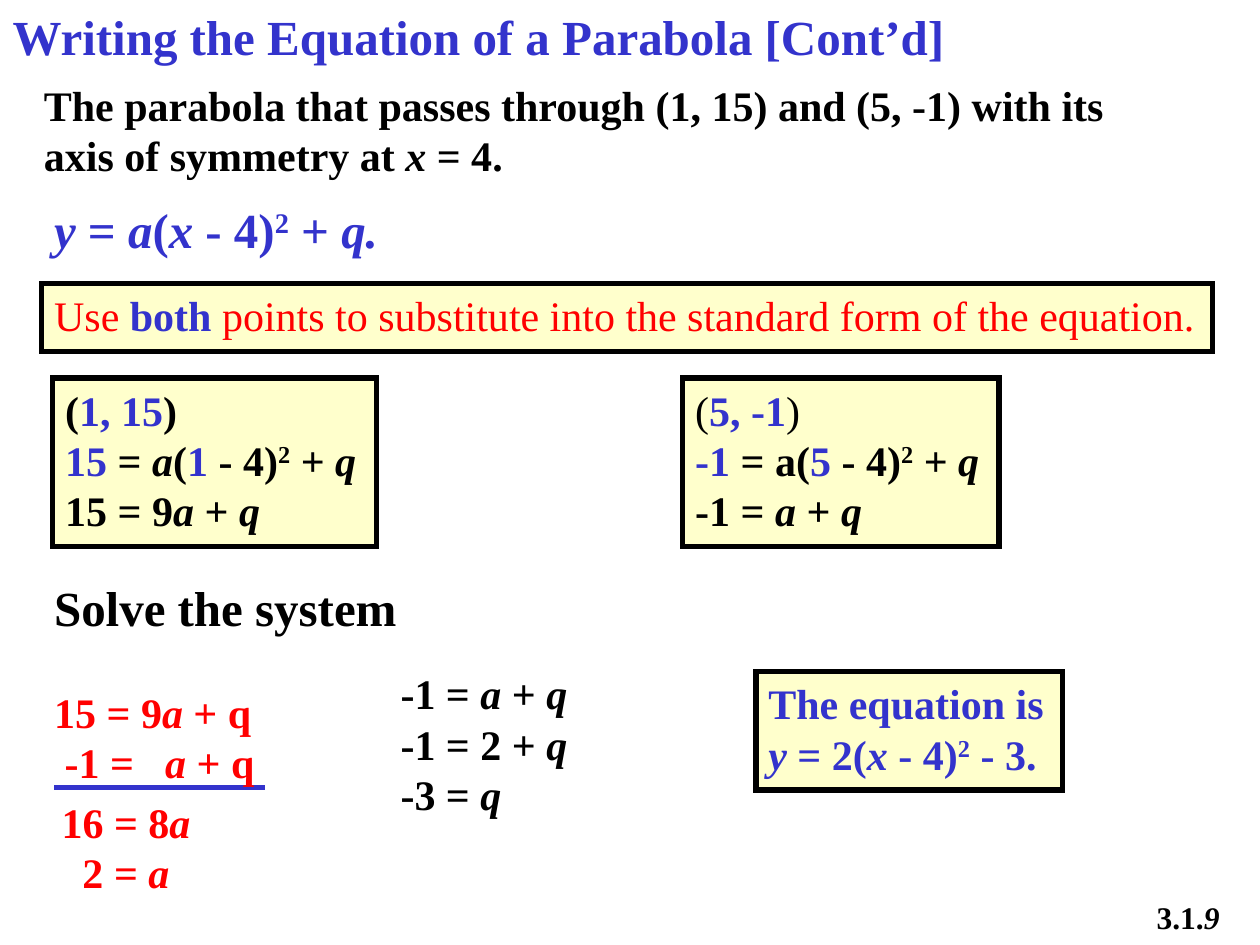
from lxml import etree
from pptx import Presentation
from pptx import util as u
from pptx.dml.color import RGBColor
from pptx.enum import shapes, text
from pptx.oxml import ns

BLACK = RGBColor(0x00, 0x00, 0x00)
WHITE = RGBColor(0xFF, 0xFF, 0xFF)
BLUE = RGBColor(0x33, 0x33, 0xCC)
RED = RGBColor(0xFF, 0x00, 0x00)
CREAM = RGBColor(0xFF, 0xFF, 0xCC)
FONT = "Times New Roman"
PLAIN, BOLD, ITALIC, SUPER = "", "b", "bi", "bs"


def add_run(paragraph, content, style=BOLD, color=BLACK, size=24):
    run = paragraph.add_run()
    run.text = content
    font = run.font
    font.name = FONT
    font.size = u.Pt(size)
    font.bold = "b" in style
    font.italic = "i" in style
    font.color.rgb = color
    if "s" in style:
        run._r.get_or_add_rPr().set("baseline", "30000")


def write_lines(shape, lines, color=BLACK, size=24, wrap=False):
    frame = shape.text_frame
    frame.word_wrap = wrap
    frame.auto_size = text.MSO_AUTO_SIZE.SHAPE_TO_FIT_TEXT
    frame.vertical_anchor = text.MSO_ANCHOR.TOP
    for index, line in enumerate(lines):
        paragraph = frame.add_paragraph() if index else frame.paragraphs[0]
        paragraph.alignment = text.PP_ALIGN.LEFT
        for content, style, *own_color in line:
            add_run(paragraph, content, style, own_color[0] if own_color else color, size)
    return frame


def place(shape, left, top, width, height):
    shape.left, shape.top = u.Pt(left), u.Pt(top)
    shape.width, shape.height = u.Pt(width), u.Pt(height)


def add_title(slide, content):
    title = slide.shapes.title
    place(title, 0, 0, 548.6, 41)
    write_lines(title, [[(content, BOLD)]], BLUE, 28)


def add_text(slide, box, lines, color=BLACK, size=24, wrap=False):
    shape = slide.shapes.add_textbox(*map(u.Pt, box))
    return write_lines(shape, lines, color, size, wrap)


def add_panel(slide, box, lines, color=BLACK, size=24, fill=CREAM, framed=True):
    shape = slide.shapes.add_shape(shapes.MSO_SHAPE.RECTANGLE, *map(u.Pt, box))
    shape.shadow.inherit = False
    shape.fill.solid()
    shape.fill.fore_color.rgb = fill
    if framed:
        shape.line.color.rgb = BLACK
        shape.line.width = u.Pt(3)
        outline = shape._element.spPr.find(ns.qn("a:ln"))
        etree.SubElement(outline, ns.qn("a:miter")).set("lim", "800000")
    else:
        shape.line.fill.background()
    write_lines(shape, lines, color, size)
    return shape


def add_rule(slide, left, right, top):
    line = slide.shapes.add_connector(
        shapes.MSO_CONNECTOR.STRAIGHT, u.Pt(left), u.Pt(top), u.Pt(right), u.Pt(top))
    line.line.color.rgb = BLUE
    line.line.width = u.Pt(3)
    etree.SubElement(line._element.spPr, ns.qn("a:effectLst"))


def set_half_transparent(shape):
    color = shape._element.spPr.find(".//" + ns.qn("a:srgbClr"))
    etree.SubElement(color, ns.qn("a:alpha")).set("val", "50000")


def set_indent(paragraph, left):
    properties = paragraph._p.get_or_add_pPr()
    properties.set("marL", str(u.Pt(left)))
    properties.set("indent", "0")


def set_tab(paragraph, position):
    tabs = etree.SubElement(paragraph._p.get_or_add_pPr(), ns.qn("a:tabLst"))
    tab = etree.SubElement(tabs, ns.qn("a:tab"))
    tab.set("pos", str(u.Pt(position)))
    tab.set("algn", "l")


def add_substitutions(slide):
    add_panel(slide, (30.2, 216, 185, 96.5), [
        [("(", BOLD), ("1, 15", BOLD, BLUE), (")", BOLD)],
        [("15", BOLD, BLUE), (" = ", BOLD), ("a", ITALIC), ("(", BOLD), ("1", BOLD, BLUE),
         (" - 4)", BOLD), ("2", SUPER), (" +", BOLD), (" q", ITALIC)],
        [("15 = 9", BOLD), ("a", ITALIC), (" + ", BOLD), ("q", ITALIC)],
    ])
    add_panel(slide, (390.2, 216, 180.7, 96.5), [
        [("(", PLAIN), ("5, -1", BOLD, BLUE), (")", PLAIN)],
        [("-1", BOLD, BLUE), (" = a(", BOLD), ("5", BOLD, BLUE), (" - 4)", BOLD),
         ("2", SUPER), (" + ", BOLD), ("q", ITALIC)],
        [("-1 = ", BOLD), ("a", ITALIC), (" + ", BOLD), ("q", ITALIC)],
    ])


def add_system(slide):
    add_rule(slide, 31, 151.2, 450)
    add_text(slide, (23.8, 326.2, 210.2, 41), [[("Solve the system", BOLD)]], size=28)
    system = add_text(slide, (23.8, 388.8, 190, 64.8), [
        [("15 = 9", BOLD), ("a", ITALIC), (" + q", BOLD)],
        [(" -1 =\t", BOLD), ("a", ITALIC), (" + q", BOLD)],
    ], RED, wrap=True)
    set_tab(system.paragraphs[1], 63.5)
    solution = add_text(slide, (28.1, 451.4, 150, 64.8), [
        [("16 = 8", BOLD), ("a", ITALIC)],
        [("2 = ", BOLD), ("a", ITALIC)],
    ], RED, wrap=True)
    set_indent(solution.paragraphs[1], 12)
    add_text(slide, (221.8, 378, 128.9, 94.3), [
        [("-1 = ", BOLD), ("a", ITALIC), (" + ", BOLD), ("q", ITALIC)],
        [("-1 = 2 + ", BOLD), ("q", ITALIC)],
        [("-3 = ", BOLD), ("q", ITALIC)],
    ])


def main():
    presentation = Presentation()
    presentation.slide_width, presentation.slide_height = u.Pt(720), u.Pt(540)
    slide = presentation.slides.add_slide(presentation.slide_layouts[5])
    add_title(slide, "Writing the Equation of a Parabola [Cont’d]")
    add_text(slide, (18, 41.8, 696.2, 65.5), [
        [("The parabola that passes through (1, 15) and (5, -1) with its", BOLD)],
        [("axis of symmetry at ", BOLD), ("x", ITALIC), (" = 4.", BOLD)],
    ], wrap=True)
    add_text(slide, (23.8, 110.2, 201.6, 41), [
        [("y", ITALIC), (" = ", BOLD), ("a", ITALIC), ("(", BOLD), ("x", ITALIC),
         (" - 4)", BOLD), ("2", SUPER), (" + ", BOLD), ("q.", ITALIC)],
    ], BLUE, 28)
    add_panel(slide, (23.8, 162, 668.9, 38.9), [
        [("Use ", PLAIN), ("both", BOLD, BLUE),
         (" points to substitute into the standard form of the equation.", PLAIN)],
    ], RED)
    add_substitutions(slide)
    add_system(slide)
    add_panel(slide, (432, 383.8, 175, 67.7), [
        [("The equation is", BOLD)],
        [("y", ITALIC), (" = 2(", BOLD), ("x", ITALIC), (" - 4)", BOLD),
         ("2", SUPER), (" - 3.", BOLD)],
    ], BLUE)
    number = add_panel(slide, (653.8, 509.8, 51.1, 28.8),
                       [[("3.1.", BOLD), ("9", ITALIC)]], size=18, fill=WHITE, framed=False)
    set_half_transparent(number)
    presentation.save("out.pptx")


if __name__ == "__main__":
    main()
